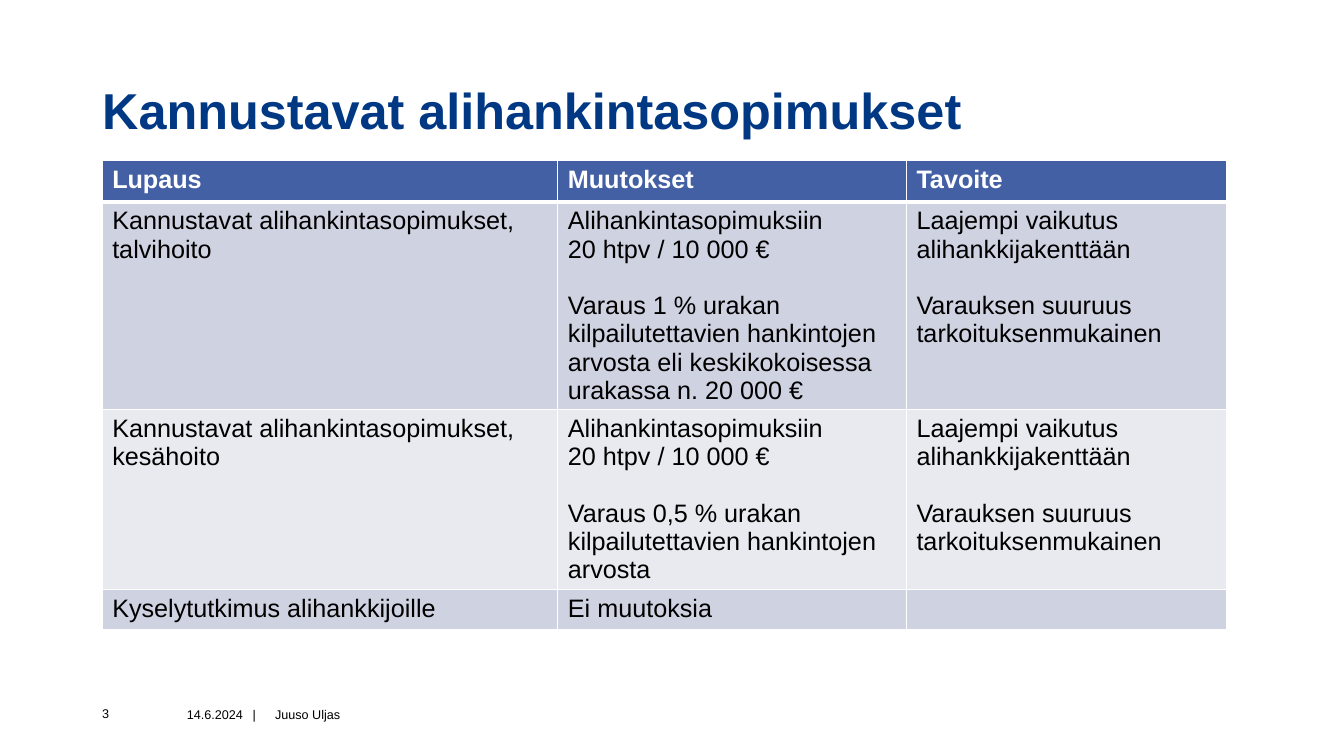
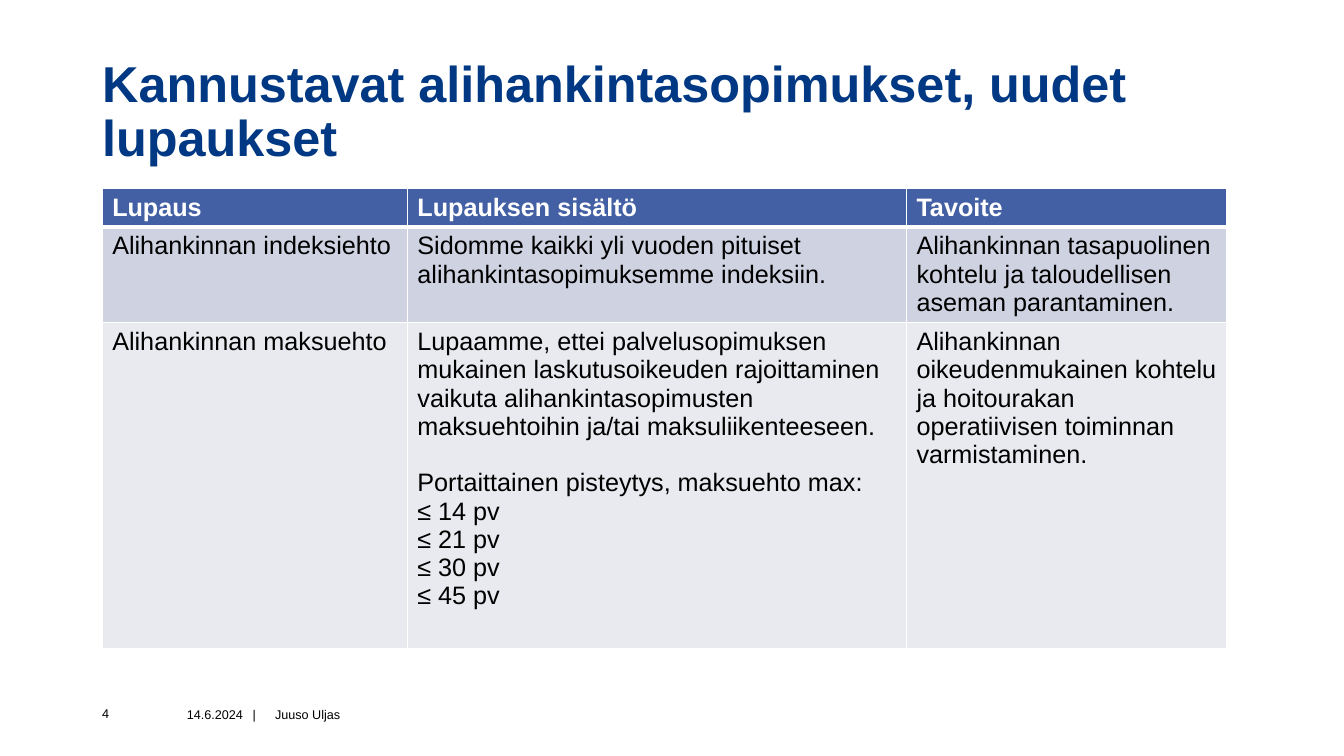
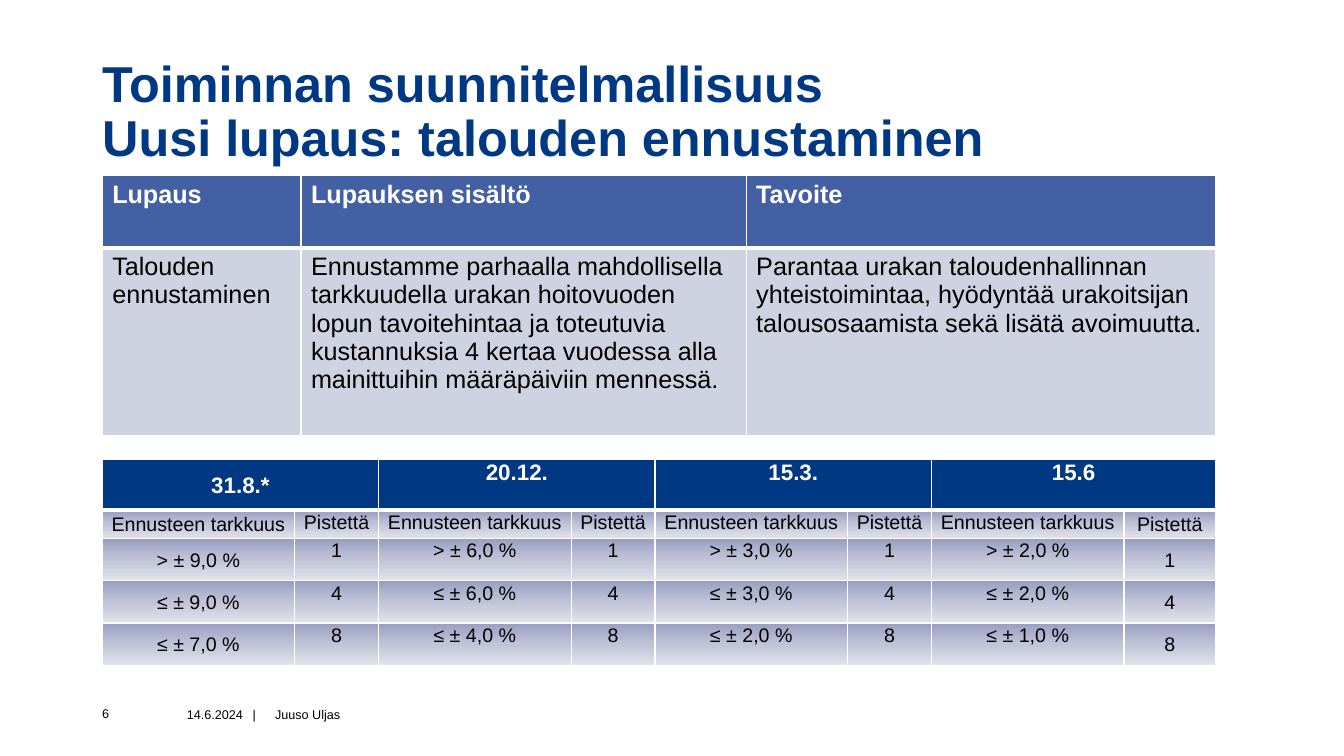
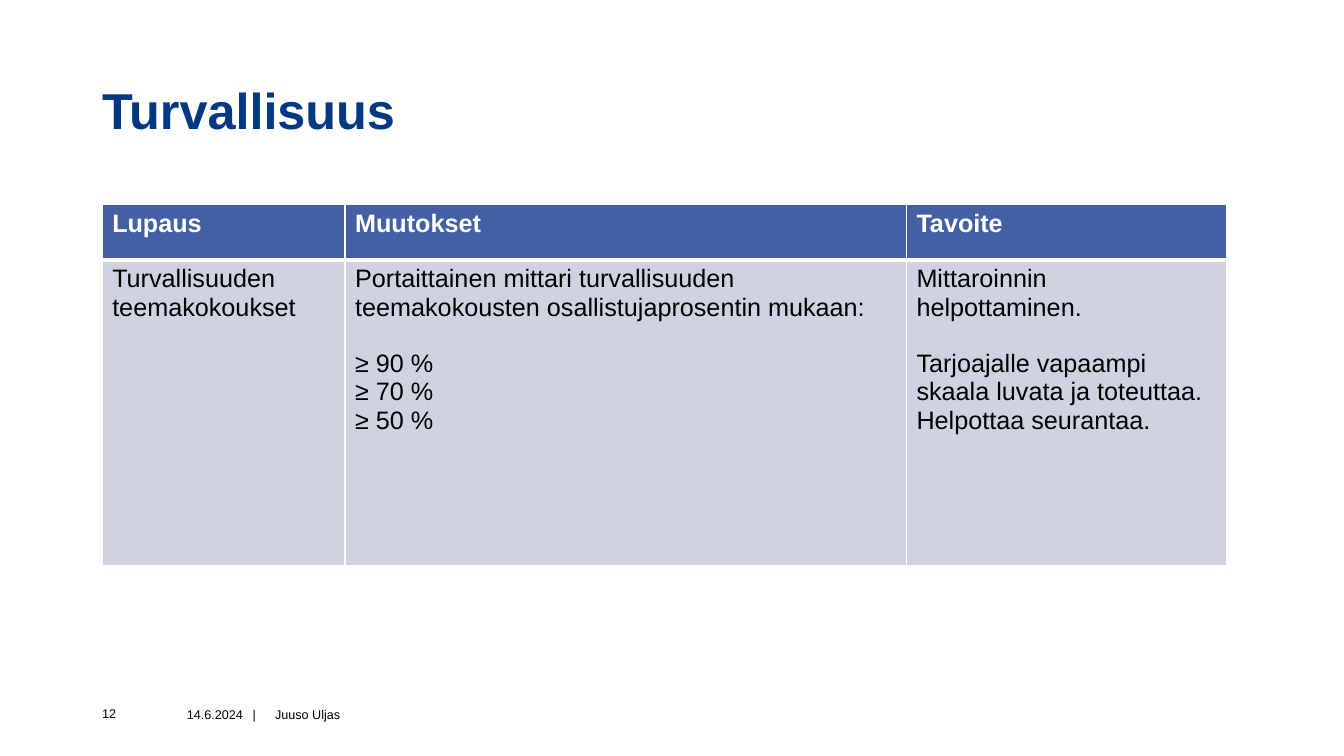
"""Builds four slides on contract promises, their changes and their goals."""
from lxml.etree import SubElement
from pptx import Presentation
from pptx.dml.color import RGBColor
from pptx.enum.text import MSO_ANCHOR as Anchor, MSO_AUTO_SIZE as AutoSize, PP_ALIGN as Align
from pptx.oxml.ns import qn
from pptx.util import Pt

NAVY = RGBColor(0x00, 0x38, 0x83)
BLUE = RGBColor(0x44, 0x60, 0xA5)
BAND_DARK = RGBColor(0xCF, 0xD2, 0xE1)
BAND_LIGHT = RGBColor(0xE9, 0xEA, 0xF0)
WHITE = RGBColor(0xFF, 0xFF, 0xFF)
BLACK = RGBColor(0x00, 0x00, 0x00)
SHADE = [(0, RGBColor(0x98, 0x9E, 0xC2)), (50, RGBColor(0xC1, 0xC4, 0xD8)),
         (100, RGBColor(0xE1, 0xE3, 0xEB))]
FONT = "Arial"
LEFT = 73
BLOCK_GAP = 20.2
FOOTER_TOP, FOOTER_HEIGHT = 502, 16
DATE, AUTHOR = "14.6.2024", "Juuso Uljas"

WIDER_EFFECT = ("Laajempi vaikutus alihankkijakenttään\n\n"
                "Varauksen suuruus tarkoituksenmukainen")
SLIDES = [
    {
        "title": "Kannustavat alihankintasopimukset", "number": 3, "top": 114.8,
        "widths": [325.5, 249, 229], "heights": [29.5, 148, 128, 28.5],
        "rows": [
            ["Lupaus", "Muutokset", "Tavoite"],
            ["Kannustavat alihankintasopimukset, talvihoito",
             "Alihankintasopimuksiin\n20 htpv / 10 000 €\n\n"
             "Varaus 1 % urakan kilpailutettavien hankintojen arvosta "
             "eli keskikokoisessa urakassa n. 20 000 €",
             WIDER_EFFECT],
            ["Kannustavat alihankintasopimukset, kesähoito",
             "Alihankintasopimuksiin\n20 htpv / 10 000 €\n\n"
             "Varaus 0,5 % urakan kilpailutettavien hankintojen arvosta",
             WIDER_EFFECT],
            ["Kyselytutkimus alihankkijoille", "Ei muutoksia", ""],
        ],
    },
    {
        "title": "Kannustavat alihankintasopimukset, uudet lupaukset", "number": 4, "top": 134.8,
        "widths": [218, 356.5, 229], "heights": [27.4, 68.4, 232.5],
        "rows": [
            ["Lupaus", "Lupauksen sisältö", "Tavoite"],
            ["Alihankinnan indeksiehto",
             "Sidomme kaikki yli vuoden pituiset alihankintasopimuksemme indeksiin.",
             "Alihankinnan tasapuolinen kohtelu ja taloudellisen aseman parantaminen."],
            ["Alihankinnan maksuehto",
             "Lupaamme, ettei palvelusopimuksen mukainen laskutusoikeuden rajoittaminen "
             "vaikuta alihankintasopimusten maksuehtoihin ja/tai maksuliikenteeseen.\n\n"
             "Portaittainen pisteytys, maksuehto max:\n≤ 14 pv\n≤ 21 pv\n≤ 30 pv\n≤ 45 pv",
             "Alihankinnan oikeudenmukainen kohtelu ja hoitourakan operatiivisen "
             "toiminnan varmistaminen."],
        ],
    },
    {
        "title": "Toiminnan suunnitelmallisuus\nUusi lupaus: talouden ennustaminen",
        "number": 6, "top": 125.5,
        "widths": [142, 318, 335.5], "heights": [51.5, 134.5],
        "rows": [
            ["Lupaus", "Lupauksen sisältö", "Tavoite"],
            ["Talouden ennustaminen",
             "Ennustamme parhaalla mahdollisella tarkkuudella urakan hoitovuoden lopun "
             "tavoitehintaa ja toteutuvia kustannuksia 4 kertaa vuodessa alla mainittuihin "
             "määräpäiviin mennessä.",
             "Parantaa urakan taloudenhallinnan yhteistoimintaa, hyödyntää urakoitsijan "
             "talousosaamista sekä lisätä avoimuutta."],
        ],
        "deadlines": [
            ("31.8.*", ["> ± 9,0 %", "≤ ± 9,0 %", "≤ ± 7,0 %"]),
            ("20.12.", ["> ± 6,0 %", "≤ ± 6,0 %", "≤ ± 4,0 %"]),
            ("15.3.", ["> ± 3,0 %", "≤ ± 3,0 %", "≤ ± 2,0 %"]),
            ("15.6", ["> ± 2,0 %", "≤ ± 2,0 %", "≤ ± 1,0 %"]),
        ],
    },
    {
        "title": "Turvallisuus", "number": 12, "top": 146.3,
        "widths": [173.5, 401, 229], "heights": [39.5, 218],
        "rows": [
            ["Lupaus", "Muutokset", "Tavoite"],
            ["Turvallisuuden teemakokoukset",
             "Portaittainen mittari turvallisuuden teemakokousten osallistujaprosentin mukaan:"
             "\n\n≥ 90 %\n≥ 70 %\n≥ 50 %",
             "Mittaroinnin helpottaminen.\n\n"
             "Tarjoajalle vapaampi skaala luvata ja toteuttaa.\nHelpottaa seurantaa."],
        ],
    },
]
POINTS = ["1", "4", "8"]
DEADLINE_TOP = 327.8
DEADLINE_WIDTHS = [137.5, 60] * 3 + [137.5, 65.5]
DEADLINE_HEIGHTS = [36.7, 20.2] + [30.2] * 3


def add_run(paragraph, text, size, color, bold=False):
    run = paragraph.add_run()
    run.text = text
    run.font.name, run.font.size, run.font.bold = FONT, Pt(size), bold
    run.font.color.rgb = color


def clear_margins(frame):
    frame.margin_left = frame.margin_right = frame.margin_top = frame.margin_bottom = 0


def prepare_layout(layout):
    heading = layout.placeholders[0]
    heading.left, heading.top, heading.width, heading.height = Pt(LEFT), Pt(36.8), Pt(837), Pt(88)
    frame = heading.text_frame
    clear_margins(frame)
    frame.vertical_anchor, frame.auto_size = Anchor.MIDDLE, AutoSize.NONE


def add_title(slide, text):
    paragraph = slide.shapes.title.text_frame.paragraphs[0]
    paragraph.alignment, paragraph.line_spacing = Align.LEFT, 0.9
    for index, line in enumerate(text.split("\n")):
        if index:
            paragraph.add_line_break()
        add_run(paragraph, line, 36, NAVY, True)


def add_footer(slide, number):
    parts = [(LEFT, 38, 0, 1, str(number)), (114.5, 77, 19, 1.1, f"{DATE}\t|"),
             (196.5, 324, 0, 1.1, AUTHOR)]
    for left, width, inset, spacing, text in parts:
        box = slide.shapes.add_textbox(Pt(left), Pt(FOOTER_TOP), Pt(width), Pt(FOOTER_HEIGHT))
        frame = box.text_frame
        clear_margins(frame)
        frame.margin_left = Pt(inset)
        frame.word_wrap, frame.vertical_anchor = True, Anchor.MIDDLE
        paragraph = frame.paragraphs[0]
        paragraph.line_spacing = spacing
        if "\t" in text:
            tabs = SubElement(paragraph._p.get_or_add_pPr(), qn("a:tabLst"))
            SubElement(tabs, qn("a:tab"), pos=str(Pt(47)), algn="l")
        add_run(paragraph, text, 9, BLACK)


def add_borders(cell, row):
    properties = cell._tc.get_or_add_tcPr()
    weights = {"L": 1, "R": 1, "T": 3 if row == 1 else 1, "B": 3 if row == 0 else 1}
    for side, weight in weights.items():
        line = SubElement(properties, qn(f"a:ln{side}"), w=str(Pt(weight)))
        SubElement(SubElement(line, qn("a:solidFill")), qn("a:srgbClr"), val=str(WHITE))


def shade(cell):
    gradient = SubElement(cell._tc.get_or_add_tcPr(), qn("a:gradFill"), rotWithShape="1")
    stops = SubElement(gradient, qn("a:gsLst"))
    for percent, color in SHADE:
        stop = SubElement(stops, qn("a:gs"), pos=str(percent * 1000))
        SubElement(stop, qn("a:srgbClr"), val=str(color))
    SubElement(gradient, qn("a:lin"), ang="5400000", scaled="0")


def paint(cell, color):
    cell.fill.solid()
    cell.fill.fore_color.rgb = color


def add_grid(slide, top, widths, heights):
    frame = slide.shapes.add_table(len(heights), len(widths), Pt(LEFT), Pt(top),
                                   Pt(sum(widths)), Pt(sum(heights)))
    table = frame.table
    table.horz_banding = False
    for column, width in zip(table.columns, widths):
        column.width = Pt(width)
    for row, height in zip(table.rows, heights):
        row.height = Pt(height)
    for row in range(len(heights)):
        for column in range(len(widths)):
            add_borders(table.cell(row, column), row)
    return table


def write_blocks(cell, text, color, bold):
    frame = cell.text_frame
    paragraph = frame.paragraphs[0]
    paragraph.font.size = Pt(18)
    for block_index, block in enumerate(text.split("\n\n")):
        for line_index, line in enumerate(block.split("\n")):
            if block_index or line_index:
                paragraph = frame.add_paragraph()
            if block_index and not line_index:
                paragraph.space_before = Pt(BLOCK_GAP)
            if line:
                add_run(paragraph, line, 18, color, bold)


def add_promises(slide, content):
    table = add_grid(slide, content["top"], content["widths"], content["heights"])
    for row, texts in enumerate(content["rows"]):
        header = row == 0
        band = BLUE if header else BAND_DARK if row % 2 else BAND_LIGHT
        for column, text in enumerate(texts):
            cell = table.cell(row, column)
            paint(cell, band)
            write_blocks(cell, text, WHITE if header else BLACK, header)


def add_deadlines(slide, deadlines):
    table = add_grid(slide, DEADLINE_TOP, DEADLINE_WIDTHS, DEADLINE_HEIGHTS)
    columns = []
    for date, limits in deadlines:
        columns += [[date, "Ennusteen tarkkuus", *limits], ["", "Pistettä", *POINTS]]
    for column, texts in enumerate(columns):
        for row, text in enumerate(texts):
            cell = table.cell(row, column)
            header = row == 0
            if header:
                paint(cell, NAVY)
            else:
                shade(cell)
            cell.margin_left = cell.margin_right = Pt(3.6)
            cell.margin_top = cell.margin_bottom = 0
            if column in (0, len(columns) - 1):
                cell.vertical_anchor = Anchor.MIDDLE
            if text:
                paragraph = cell.text_frame.paragraphs[0]
                paragraph.alignment, paragraph.line_spacing = Align.CENTER, 1.07
                add_run(paragraph, text, 16 if header else 14, WHITE if header else BLACK, header)
    for column in range(0, len(columns), 2):
        table.cell(0, column).merge(table.cell(0, column + 1))


def main():
    deck = Presentation()
    deck.slide_width, deck.slide_height = Pt(960), Pt(540)
    layout = deck.slide_layouts[5]
    prepare_layout(layout)
    for content in SLIDES:
        slide = deck.slides.add_slide(layout)
        add_title(slide, content["title"])
        add_promises(slide, content)
        add_footer(slide, content["number"])
        if "deadlines" in content:
            add_deadlines(slide, content["deadlines"])
    deck.save("out.pptx")


if __name__ == "__main__":
    main()
